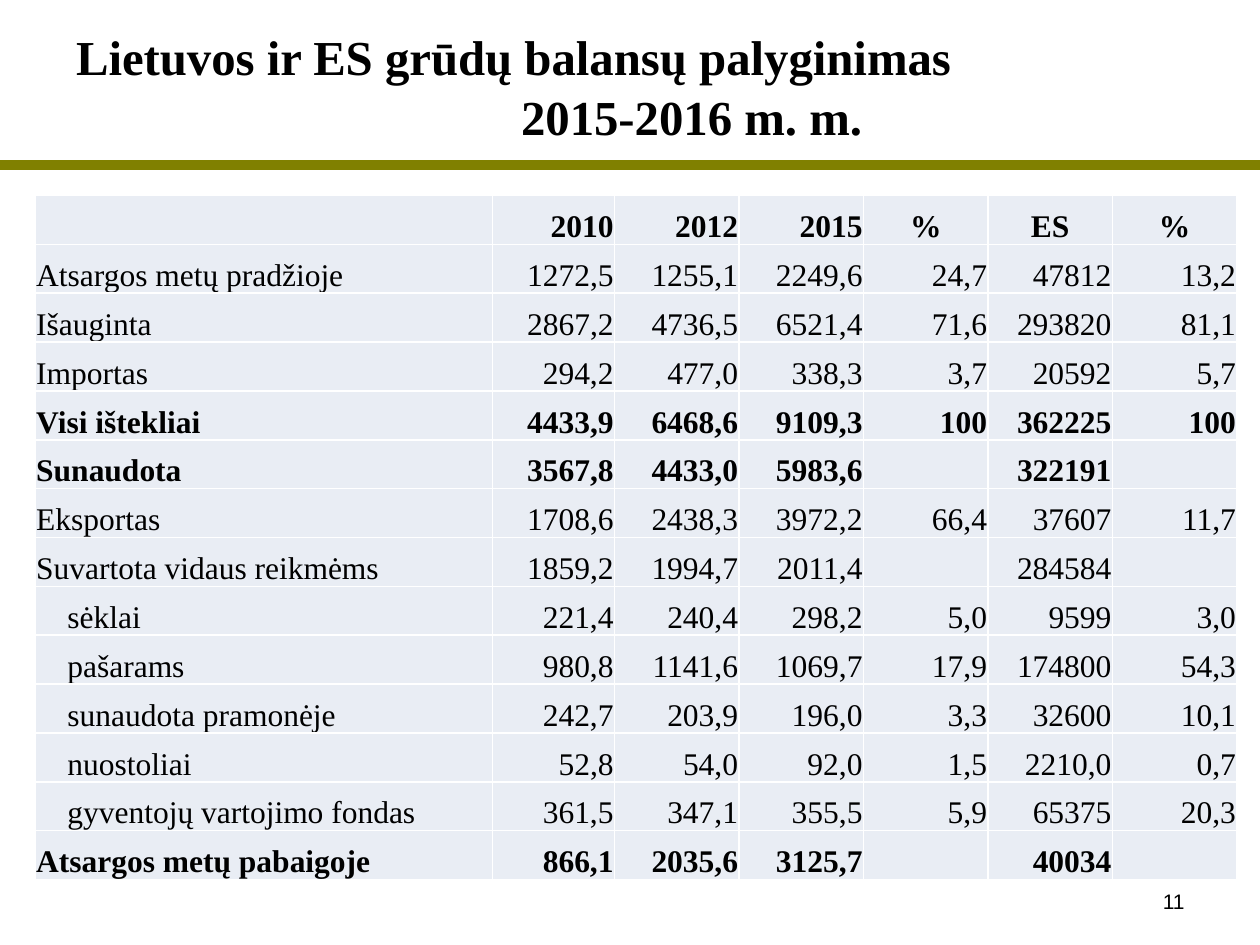
"""Build a slide comparing the grain balances of Lithuania and the EU."""
from lxml import etree
from pptx import Presentation
from pptx import util as u
from pptx.dml.color import RGBColor
from pptx.enum import shapes, text
from pptx.oxml.ns import qn

SERIF = "Times New Roman"
LEFT, CENTER, RIGHT = text.PP_ALIGN.LEFT, text.PP_ALIGN.CENTER, text.PP_ALIGN.RIGHT


def color(value):
    return RGBColor.from_string(value)


def style(para, font, size, bold, align, indent=0):
    para.font.name = font
    para.font.size = u.Pt(size)
    para.font.bold = bold
    para.font.color.rgb = color("000000")
    para.alignment = align
    properties = para._p.get_or_add_pPr()
    properties.set("marL", str(u.Cm(indent)))
    properties.set("indent", "0")


HEADER = ["", "2010", "2012", "2015", "%", "ES", "%"]
BALANCE = [
    ["Atsargos metų pradžioje", "1272,5", "1255,1", "2249,6", "24,7", "47812", "13,2"],
    ["Išauginta", "2867,2", "4736,5", "6521,4", "71,6", "293820", "81,1"],
    ["Importas", "294,2", "477,0", "338,3", "3,7", "20592", "5,7"],
    ["Visi ištekliai", "4433,9", "6468,6", "9109,3", "100", "362225", "100"],
    ["Sunaudota", "3567,8", "4433,0", "5983,6", "", "322191", ""],
    ["Eksportas", "1708,6", "2438,3", "3972,2", "66,4", "37607", "11,7"],
    ["Suvartota vidaus reikmėms", "1859,2", "1994,7", "2011,4", "", "284584", ""],
    ["sėklai", "221,4", "240,4", "298,2", "5,0", "9599", "3,0"],
    ["pašarams", "980,8", "1141,6", "1069,7", "17,9", "174800", "54,3"],
    ["sunaudota pramonėje", "242,7", "203,9", "196,0", "3,3", "32600", "10,1"],
    ["nuostoliai", "52,8", "54,0", "92,0", "1,5", "2210,0", "0,7"],
    ["gyventojų vartojimo fondas", "361,5", "347,1", "355,5", "5,9", "65375", "20,3"],
    ["Atsargos metų pabaigoje", "866,1", "2035,6", "3125,7", "", "40034", ""],
]
ROWS = [HEADER] + BALANCE
BOLD_ROWS = {0, 4, 5, 13}
USE_ROWS = range(8, 13)
COLUMN_WIDTHS = [9.22, 2.46] + [2.51] * 5

deck = Presentation()
deck.slide_width, deck.slide_height = u.Cm(25.4), u.Cm(19.05)
page = deck.slides.add_slide(deck.slide_layouts[5])

title = page.shapes.title
title.left, title.top, title.width, title.height = u.Cm(0), u.Cm(0.33), u.Cm(24.89), u.Cm(2.79)
title.text_frame.text = "Lietuvos ir ES grūdų balansų palyginimas\n2015-2016 m. m."
title.text_frame.vertical_anchor = text.MSO_ANCHOR.MIDDLE
for para, indent in zip(title.text_frame.paragraphs, (1.28, 10.25)):
    style(para, SERIF, 27.9, True, LEFT, indent)
    para.line_spacing = u.Pt(34.3)
    para.space_before = u.Pt(0)

rule = page.shapes.add_connector(
    shapes.MSO_CONNECTOR.STRAIGHT, u.Cm(0), u.Cm(3.33), u.Cm(25.4), u.Cm(3.33))
rule.line.color.rgb = color("808000")
rule.line.width = u.Pt(6)
etree.SubElement(rule._element.spPr, qn("a:effectLst"))

number = page.shapes.add_textbox(u.Cm(18.21), u.Cm(17.65), u.Cm(5.92), u.Cm(1.02))
number.text_frame.word_wrap = True
number.text_frame.vertical_anchor = text.MSO_ANCHOR.MIDDLE
number.text_frame.text = "11"
style(number.text_frame.paragraphs[0], "Arial", 12, False, RIGHT)

table = page.shapes.add_table(
    len(ROWS), len(HEADER), u.Cm(0.71), u.Cm(3.94), u.Cm(24.23), u.Cm(13.79)).table
for column, width in zip(table.columns, COLUMN_WIDTHS):
    column.width = u.Cm(width)

for r, values in enumerate(ROWS):
    table.rows[r].height = u.Cm(13.79 / len(ROWS))
    for c, value in enumerate(values):
        cell = table.cell(r, c)
        cell.text = value
        cell.vertical_anchor = text.MSO_ANCHOR.BOTTOM
        cell.margin_left = cell.margin_right = cell.margin_top = u.Cm(0.02)
        cell.margin_bottom = u.Cm(0)
        align = LEFT if c == 0 else CENTER if r == 0 and c > 3 else RIGHT
        indent = 0.63 if c == 0 and r in USE_ROWS else 0
        style(cell.text_frame.paragraphs[0], SERIF, 18, r in BOLD_ROWS, align, indent)
        for side in ("a:lnL", "a:lnR", "a:lnT", "a:lnB"):
            border = etree.SubElement(cell._tc.get_or_add_tcPr(), qn(side), w=str(u.Pt(1)))
            paint = etree.SubElement(border, qn("a:solidFill"))
            etree.SubElement(paint, qn("a:srgbClr"), val="FFFFFF")
        cell.fill.solid()
        cell.fill.fore_color.rgb = color("E9EDF4")

deck.save("out.pptx")
